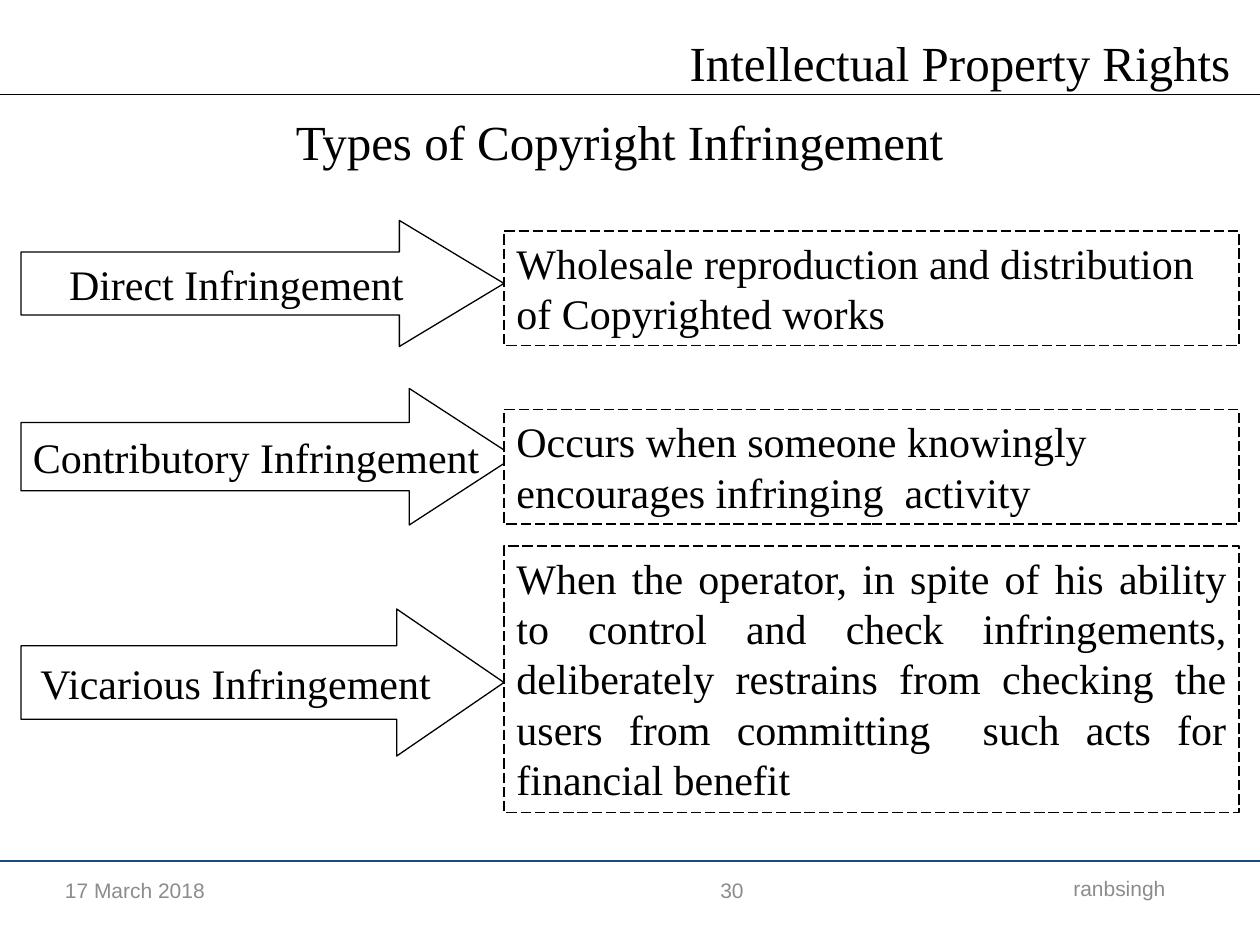
from lxml.etree import SubElement
from pptx import Presentation
from pptx.dml.color import RGBColor
from pptx.enum.dml import MSO_LINE
from pptx.enum.shapes import MSO_CONNECTOR, MSO_SHAPE
from pptx.enum.text import MSO_ANCHOR as Anchor, MSO_AUTO_SIZE as AutoSize, PP_ALIGN as Align
from pptx.oxml.ns import qn
from pptx.util import Inches, Pt

BLACK = RGBColor(0x00, 0x00, 0x00)
WHITE = RGBColor(0xFF, 0xFF, 0xFF)
NAVY = RGBColor(0x1F, 0x49, 0x7D)
GRAY = RGBColor(0x8C, 0x8C, 0x8C)
CELL = Inches(10) // 120
COLUMNS, ROWS = 120, 90
SERIF, SANS = "Times New Roman", "Arial"


def grid(*cells):
    """Turn counts of grid cells into slide lengths."""
    return [round(count * CELL) for count in cells]


def write(shape, text, size, font=SERIF, color=BLACK, align=Align.LEFT, wrap=True):
    """Put one paragraph of uniformly styled text in a shape."""
    frame = shape.text_frame
    frame.word_wrap = wrap
    paragraph = frame.paragraphs[0]
    paragraph.text = text
    paragraph.alignment = align
    paragraph.font.name = font
    paragraph.font.size = Pt(size)
    paragraph.font.color.rgb = color
    return frame


def add_rule(slide, row, color):
    """Draw a thin line across the full slide width."""
    line = slide.shapes.add_connector(MSO_CONNECTOR.STRAIGHT, *grid(0, row, COLUMNS, row))
    line.line.color.rgb = color
    line.line.width = Pt(0.75)
    SubElement(line._element.spPr, qn("a:effectLst"))


def add_heading(slide, text, *box):
    """Add a one-line heading."""
    frame = write(slide.shapes.add_textbox(*grid(*box)), text, 28, wrap=False)
    frame.auto_size = AutoSize.SHAPE_TO_FIT_TEXT


def add_footer(slide, text, column, row, width, align, right_inset=1.2):
    """Add one grey footer item."""
    box = slide.shapes.add_textbox(*grid(column, row, width, 4.8))
    frame = write(box, text, 12, SANS, GRAY, align)
    frame.vertical_anchor = Anchor.MIDDLE
    frame.margin_right = grid(right_inset)[0]


def add_outlined(slide, kind, *box):
    """Add a white shape with a thin black outline."""
    shape = slide.shapes.add_shape(kind, *grid(*box))
    shape.shadow.inherit = False
    shape.fill.solid()
    shape.fill.fore_color.rgb = WHITE
    shape.line.color.rgb = BLACK
    shape.line.width = Pt(0.75)
    return shape


def add_type_arrow(slide, text, row, width, height, head, left_inset=1.2):
    """Add an arrow naming a type of infringement."""
    arrow = add_outlined(slide, MSO_SHAPE.RIGHT_ARROW, 2, row, width, height)
    arrow.adjustments[0] = 0.5
    arrow.adjustments[1] = head
    frame = write(arrow, text, 24, align=Align.CENTER, wrap=False)
    frame.vertical_anchor = Anchor.MIDDLE
    frame.margin_left = grid(left_inset)[0]


def add_definition(slide, text, row, height, align=Align.LEFT):
    """Add a dashed box explaining a type of infringement."""
    box = add_outlined(slide, MSO_SHAPE.RECTANGLE, 48, row, 70, height)
    box.line.dash_style = MSO_LINE.LONG_DASH
    frame = write(box, text, 24, align=align)
    frame.vertical_anchor = Anchor.TOP
    frame.auto_size = AutoSize.SHAPE_TO_FIT_TEXT


def main():
    """Build the slide on types of copyright infringement."""
    presentation = Presentation()
    presentation.slide_width, presentation.slide_height = grid(COLUMNS, ROWS)
    slide = presentation.slides.add_slide(presentation.slide_layouts[6])

    add_rule(slide, 9, BLACK)
    add_heading(slide, "Intellectual Property Rights", 64.5, 2.5, 54.5, 6.8)
    add_rule(slide, 82, NAVY)
    add_footer(slide, "17 March 2018", 5, 82.4, 28, Align.LEFT)
    add_footer(slide, "ranbsingh", 78, 82.2, 38, Align.RIGHT, right_inset=5)
    add_footer(slide, "30", 44, 82.4, 28, Align.RIGHT)

    add_type_arrow(slide, "Direct Infringement", 21, 46, 12, 0.83)
    add_type_arrow(slide, "Contributory Infringement", 37, 47, 13, 0.77, left_inset=4)
    add_type_arrow(slide, "Vicarious Infringement", 58, 46, 14, 0.73)

    add_definition(slide, "Wholesale reproduction and distribution of Copyrighted works", 22, 10.9)
    add_definition(slide, "Occurs when someone knowingly encourages infringing  activity", 39, 10.9)
    add_definition(
        slide,
        "When the operator, in spite of his ability to control and check infringements, "
        "deliberately restrains from checking the users from committing  such acts for "
        "financial benefit",
        52, 25.4, Align.JUSTIFY,
    )
    add_heading(slide, "Types of Copyright Infringement", 27, 10, 64.8, 6.8)
    presentation.save("out.pptx")


if __name__ == "__main__":
    main()
